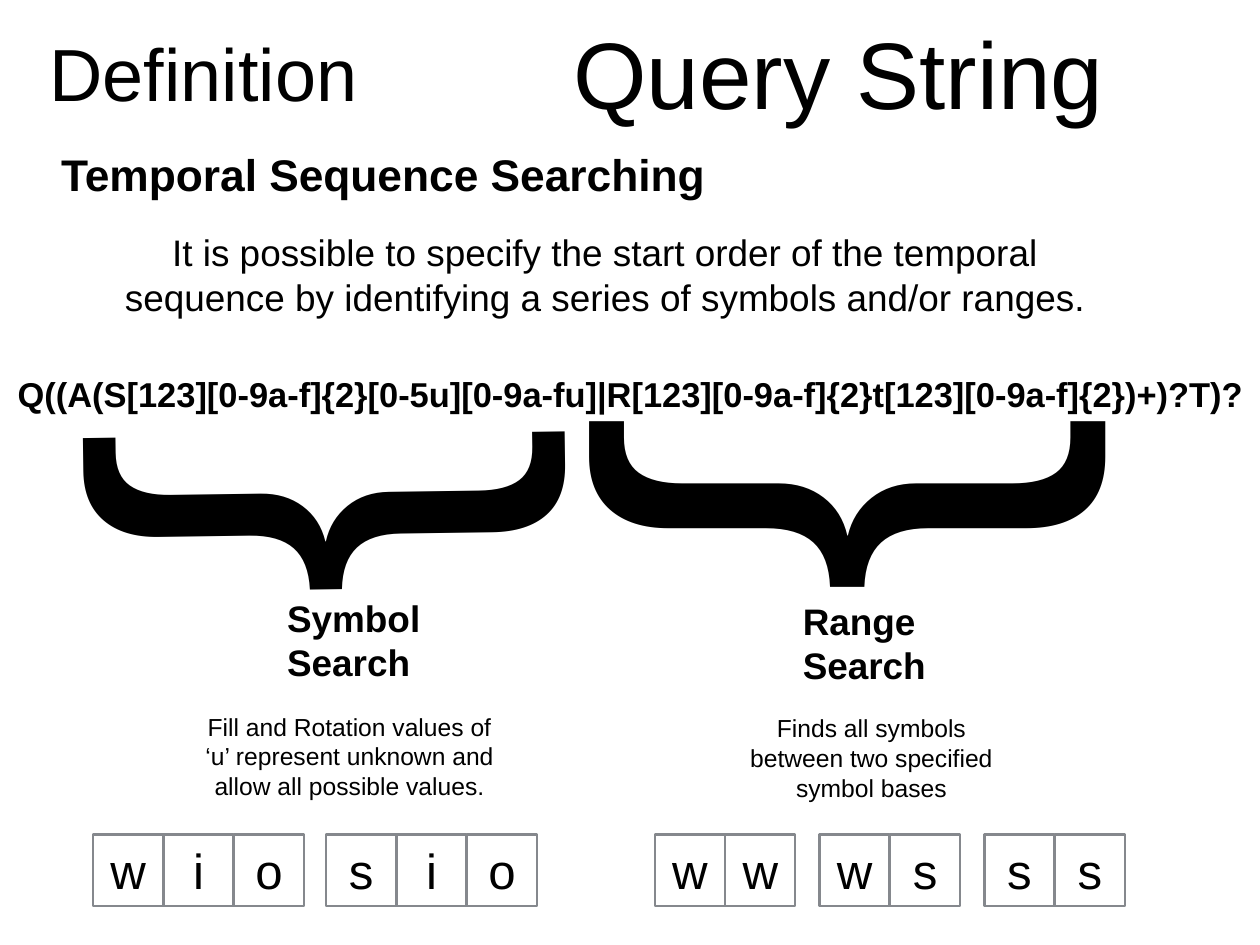
from dataclasses import dataclass

from pptx import Presentation
from pptx.dml.color import RGBColor
from pptx.enum.shapes import MSO_SHAPE
from pptx.enum.text import MSO_ANCHOR, MSO_AUTO_SIZE, PP_ALIGN
from pptx.shapes.autoshape import Shape
from pptx.slide import Slide
from pptx.util import Inches, Pt

LEFT, CENTER = PP_ALIGN.LEFT, PP_ALIGN.CENTER
MIDDLE = MSO_ANCHOR.MIDDLE
NO_AUTOFIT = MSO_AUTO_SIZE.NONE
RECTANGLE = MSO_SHAPE.RECTANGLE
TITLE_ONLY = 5


@dataclass(frozen=True)
class Theme:
    font: str = "Arial"
    ink: RGBColor = RGBColor(0x00, 0x00, 0x00)
    cell_line: RGBColor = RGBColor(0x85, 0x88, 0x8D)
    cell_line_width: float = 2
    title: float = 60
    topic: float = 76.8
    heading: float = 36
    body: float = 30
    query: float = 28
    note: float = 20
    cell: float = 40
    symbol_brace: float = 420
    range_brace: float = 450


THEME = Theme()


@dataclass(frozen=True)
class Label:
    text: str
    left: float
    top: float
    width: float
    height: float
    size: float
    bold: bool = False
    align: PP_ALIGN = LEFT
    rotation: float = 0
    inset: float = 0.06


@dataclass(frozen=True)
class SymbolRow:
    """A run of touching cells, one letter in each."""
    letters: str
    left: float


TITLE = Label("Definition", 0.56, 0.11, 5.75, 1.4, THEME.title, inset=0)

LABELS = [
    Label("Q((A(S[123][0-9a-f]{2}[0-5u][0-9a-fu]|R[123][0-9a-f]{2}t[123][0-9a-f]{2})+)?T)?",
          0.05, 4.16, 14.12, 0.58, THEME.query, bold=True, align=CENTER),
    Label("Query String", 4.84, 0.11, 9.25, 1.4, THEME.topic, align=CENTER, inset=0),
    Label("}", 3.44, 2.25, 2.11, 7.11, THEME.symbol_brace, rotation=89.2),
    Label("Temporal Sequence Searching", 0.63, 1.61, 7.73, 0.71, THEME.heading, bold=True),
    Label("Symbol Search", 3.18, 6.67, 1.91, 1.11, THEME.body, bold=True),
    Label("}", 9.24, 2, 2.41, 7.61, THEME.range_brace, rotation=90),
    Label("Range\nSearch", 9, 6.7, 1.91, 1.11, THEME.body, bold=True),
    Label("Fill and Rotation values of ‘u’ represent unknown and allow all possible values.",
          2.24, 7.98, 3.41, 1.11, THEME.note, align=CENTER),
    Label("Finds all symbols between two specified symbol bases",
          8.36, 8, 2.95, 1.11, THEME.note, align=CENTER),
    Label("It is possible to specify the start order of the temporal "
          "sequence by identifying a series of symbols and/or ranges.",
          1.16, 2.54, 11.34, 1.11, THEME.body, align=CENTER),
]

CELL_TOP, CELL_WIDTH, CELL_HEIGHT = 9.42, 0.79, 0.81
CELL_STEP = 0.795
SYMBOL_ROWS = [
    SymbolRow("wio", 1.05),
    SymbolRow("sio", 3.68),
    SymbolRow("ww", 7.39),
    SymbolRow("ws", 9.25),
    SymbolRow("ss", 11.11),
]


def set_all(target: object, values: dict) -> None:
    """Set each named attribute of the target."""
    for name, value in values.items():
        setattr(target, name, value)


def write_label(box: Shape, label: Label) -> None:
    """Place the box and fill it with the label's formatted text."""
    set_all(box, {
        "left": Inches(label.left), "top": Inches(label.top),
        "width": Inches(label.width), "height": Inches(label.height),
        "rotation": label.rotation,
    })
    inset = Inches(label.inset)
    set_all(box.text_frame, {
        "text": label.text, "word_wrap": True, "auto_size": NO_AUTOFIT,
        "vertical_anchor": MIDDLE,
        "margin_left": inset, "margin_right": inset,
        "margin_top": inset, "margin_bottom": inset,
    })
    for para in box.text_frame.paragraphs:
        para.alignment = label.align
        for span in para.runs:
            set_all(span.font, {
                "name": THEME.font, "size": Pt(label.size), "bold": label.bold,
            })
            span.font.color.rgb = THEME.ink


def add_label(page: Slide, label: Label) -> None:
    write_label(page.shapes.add_textbox(0, 0, 0, 0), label)


def add_symbol_row(page: Slide, row: SymbolRow) -> None:
    for index, letter in enumerate(row.letters):
        cell = page.shapes.add_shape(RECTANGLE, 0, 0, 0, 0)
        cell.shadow.inherit = False
        cell.fill.background()
        cell.line.color.rgb = THEME.cell_line
        cell.line.width = Pt(THEME.cell_line_width)
        write_label(cell, Label(letter, row.left + index * CELL_STEP, CELL_TOP,
                                CELL_WIDTH, CELL_HEIGHT, THEME.cell,
                                align=CENTER, inset=0))


def main() -> None:
    deck = Presentation()
    deck.slide_width, deck.slide_height = Inches(14.22), Inches(10.67)
    page = deck.slides.add_slide(deck.slide_layouts[TITLE_ONLY])
    write_label(page.shapes.title, TITLE)
    for label in LABELS:
        add_label(page, label)
    for row in SYMBOL_ROWS:
        add_symbol_row(page, row)
    deck.save("out.pptx")


if __name__ == "__main__":
    main()
